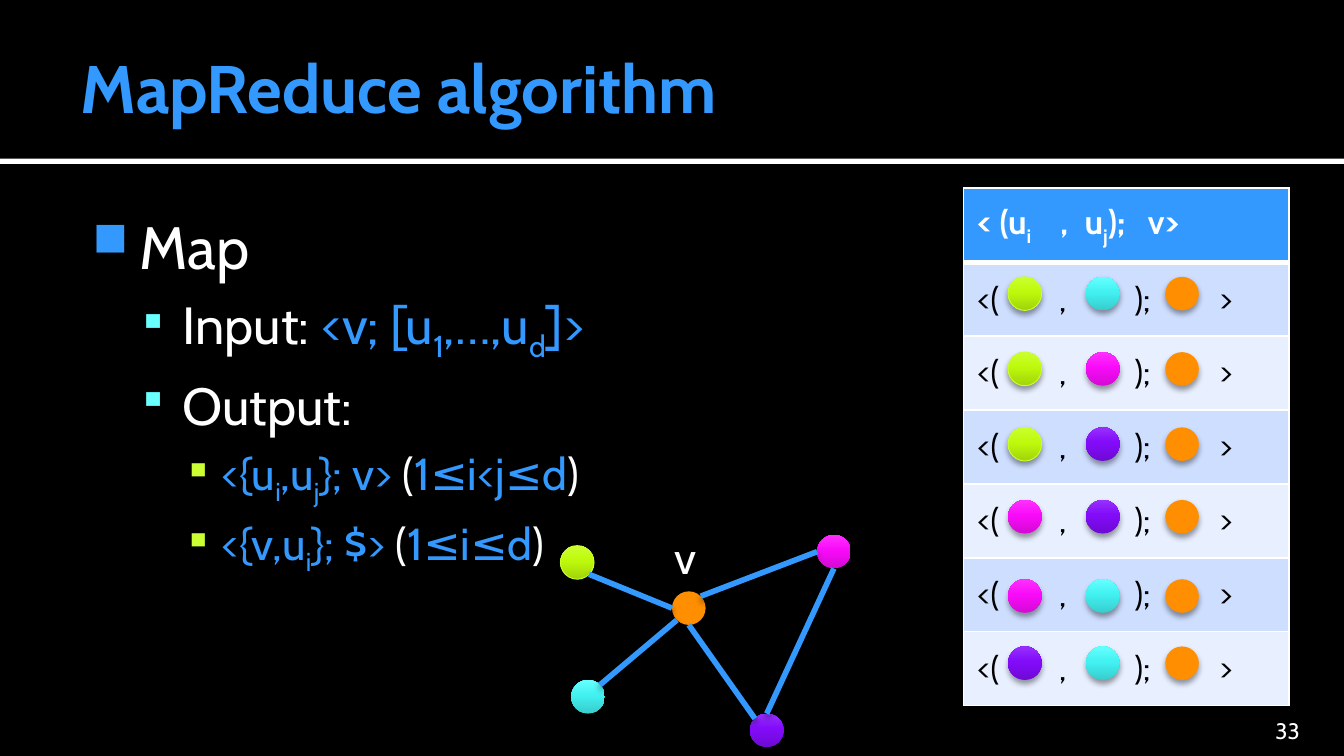
from math import cos, radians, sin

from lxml import etree
from pptx import Presentation
from pptx.dml.color import RGBColor
from pptx.enum.shapes import MSO_CONNECTOR as Line, MSO_SHAPE as Shape
from pptx.enum.text import MSO_ANCHOR as Anchor, PP_ALIGN as Align
from pptx.oxml import parse_xml
from pptx.oxml.ns import nsdecls, qn
from pptx.util import Inches, Pt

# Content
FONT, BLUE, WHITE, BLACK = "Cabin", "3399FF", "FFFFFF", "000000"
TITLE = "MapReduce algorithm"
PAGE_NUMBER = "33"

# Level, then runs of (text, colour); a leading "_" marks a subscript
BODY = [
    (0, [("Map", WHITE)]),
    (1, [("Input: ", WHITE), ("<v; [u", BLUE), ("_1", BLUE), (",…,u", BLUE),
         ("_d", BLUE), ("]>", BLUE)]),
    (1, [("Output:", WHITE)]),
    (2, [("<{u", BLUE), ("_i", BLUE), (",u", BLUE), ("_j", BLUE), ("}; v>", BLUE),
         (" (", WHITE), ("1≤i<j≤d", BLUE), (")", WHITE)]),
    (2, [("<{v,u", BLUE), ("_i", BLUE), ("}; $>", BLUE), (" (", WHITE),
         ("1≤i≤d", BLUE), (")", WHITE)]),
]
# Size, space before, left margin, hanging indent, Wingdings bullet, its colour, its percent
LEVELS = [
    (32, 0, 0.48, 0.35, "n", BLUE, 80),
    (28, 5.6, 0.8, 0.3, "§", "69FFFF", 90),
    (24, 4.8, 1.09, 0.25, "§", "CCFF33", 100),
]

# Node colours: one is solid, the others run from bottom to top
COLOURS = {
    "orange": ["FF8E00"],
    "purple": ["6F0AD4", "820BF9", "9830FF"],
    "pink": ["D40AD4", "F90BF9", "FF30FF"],
    "cyan": ["38CDCD", "42F1F1", "66FFFF"],
    "green": ["A1D40A", "BEF90B", "CBFF30"],
}
NODES = {"orange": (5, 4.4), "purple": (5.58, 5.31), "pink": (6.08, 3.98),
         "cyan": (4.25, 5.06), "green": (4.17, 4.06)}
# Node and angle (clockwise from the right) at both ends
EDGES = [("orange", -45, "pink", 180), ("orange", 90, "purple", 225),
         ("pink", 90, "purple", -90), ("cyan", -45, "orange", 135),
         ("green", 45, "orange", 180)]
DOT = 0.25

HEADER = [("< (u", WHITE), ("_i", WHITE), ("\t,\tu", WHITE), ("_j", WHITE),
          (");\tv>", WHITE)]
HEADER_TABS = [0.62, 0.8, 1.27]
PAIR = [("<(\t,\t);\t>", BLACK)]
PAIR_TABS = [0.61, 1.17, 1.8]
# Top of the dots and the two neighbours of each pair
PAIRS = [(2.06, "green", "cyan"), (2.62, "green", "pink"), (3.18, "green", "purple"),
         (3.72, "pink", "purple"), (4.31, "pink", "cyan"), (4.81, "purple", "cyan")]
DOT_LEFTS = [7.5, 8.08, 8.67]
ROW_HEIGHT = 0.55


def rgb(code):
    return RGBColor.from_string(code)


def add_runs(para, runs, size, bold=False):
    for text, colour in runs:
        span = para.add_run()
        span.text = text.lstrip("_")
        span.font.name, span.font.size, span.font.bold = FONT, Pt(size), bold
        span.font.color.rgb = rgb(colour)
        if text.startswith("_"):
            span.font._element.set("baseline", "-25000")


def set_frame(frame, insets, anchor=Anchor.TOP):
    frame.word_wrap = True
    frame.vertical_anchor = anchor
    (frame.margin_left, frame.margin_top,
     frame.margin_right, frame.margin_bottom) = map(Inches, insets)


def add_text(at, insets, anchor=Anchor.TOP):
    box = page.shapes.add_textbox(*map(Inches, at))
    set_frame(box.text_frame, insets, anchor)
    return box.text_frame


def add_shadow(shape, blur, distance, alpha):
    props = shape._element.spPr
    effects = props.find(qn("a:effectLst"))
    if effects is None:
        effects = etree.SubElement(props, qn("a:effectLst"))
    effects.append(parse_xml(
        f'<a:outerShdw {nsdecls("a")} blurRad="{Pt(blur)}" dist="{Pt(distance)}" '
        f'dir="5400000" rotWithShape="0"><a:srgbClr val="{BLACK}">'
        f'<a:alpha val="{alpha * 1000}"/></a:srgbClr></a:outerShdw>'))


def add_dot(shapes, name, left, top):
    dot = shapes.add_shape(Shape.OVAL, *map(Inches, (left, top, DOT, DOT)))
    dot.shadow.inherit = False
    colours = COLOURS[name]
    if len(colours) == 1:
        dot.fill.solid()
        dot.fill.fore_color.rgb = rgb(colours[0])
    else:
        dot.fill.gradient()
        dot.fill.gradient_angle = 90
        stops = dot._element.spPr.find(".//" + qn("a:gsLst"))
        stops.clear()
        for position, colour in zip((0, 55, 100), colours):
            stops.append(parse_xml(
                f'<a:gs {nsdecls("a")} pos="{position * 1000}">'
                f'<a:srgbClr val="{colour}"/></a:gs>'))
    if name == "green":
        dot.line.color.rgb = rgb("CAFE2D")
        dot.line.width = Pt(0.5)
    else:
        dot.line.fill.background()
    add_shadow(dot, 3.1, 2, 38)


def rim_point(name, angle):
    left, top = NODES[name]
    radius = DOT / 2
    return (Inches(left + radius + radius * cos(radians(angle))),
            Inches(top + radius + radius * sin(radians(angle))))


def set_cell(cell, runs, tabs, fill, bold, bottom):
    cell.vertical_anchor = Anchor.MIDDLE
    para = cell.text_frame.paragraphs[0]
    add_runs(para, runs, 18, bold)
    tab_list = etree.SubElement(para._p.get_or_add_pPr(), qn("a:tabLst"))
    for tab in tabs:
        etree.SubElement(tab_list, qn("a:tab"), pos=str(Inches(tab)), algn="l")
    props = cell._tc.get_or_add_tcPr()
    for side, width in (("L", 1), ("R", 1), ("T", 1), ("B", bottom)):
        props.append(parse_xml(
            f'<a:ln{side} {nsdecls("a")} w="{Pt(width)}"><a:solidFill>'
            f'<a:srgbClr val="{WHITE}"/></a:solidFill></a:ln{side}>'))
    cell.fill.solid()
    cell.fill.fore_color.rgb = rgb(fill)


# Widescreen page, 16 to 9
deck = Presentation()
deck.slide_width, deck.slide_height = Inches(10), Inches(10 * 9 / 16)
page = deck.slides.add_slide(deck.slide_layouts[5])
page.background.fill.solid()
page.background.fill.fore_color.rgb = rgb(BLACK)

# Title and the rule under it
title = page.shapes.title
title.left, title.top, title.width, title.height = map(Inches, (0.5, 0.13, 9, 1.03))
set_frame(title.text_frame, (0.1, 0.05, 0.05, 0.05), Anchor.MIDDLE)
title.text_frame.paragraphs[0].alignment = Align.LEFT
add_runs(title.text_frame.paragraphs[0], [(TITLE, BLUE)], 36, True)

rule = page.shapes.add_shape(Shape.RECTANGLE, *map(Inches, (0, 1.18, 10, 0.04)))
rule.shadow.inherit = False
rule.fill.solid()
rule.fill.fore_color.rgb = rgb(WHITE)
rule.line.fill.background()
add_shadow(rule, 2.5, 0.8, 60)

# Bulleted text
body = add_text((0.5, 1.46, 9, 3.79), (0.06, 0.1, 0.1, 0.05))
for index, (level, runs) in enumerate(BODY):
    para = body.add_paragraph() if index else body.paragraphs[0]
    size, before, margin, hang, bullet, colour, percent = LEVELS[level]
    para.level = level
    para.space_before = Pt(before)
    props = para._p.get_or_add_pPr()
    props.set("marL", str(Inches(margin)))
    props.set("indent", str(-Inches(hang)))
    bullet_colour = etree.SubElement(props, qn("a:buClr"))
    etree.SubElement(bullet_colour, qn("a:srgbClr"), val=colour)
    etree.SubElement(props, qn("a:buSzPct"), val=str(percent * 1000))
    etree.SubElement(props, qn("a:buFont"), typeface="Wingdings", charset="2")
    etree.SubElement(props, qn("a:buChar"), char=bullet)
    add_runs(para, runs, size)

# Page number
number = add_text((8.97, 5.31, 0.8, 0.23), (0.1, 0.05, 0.1, 0), Anchor.BOTTOM)
number.paragraphs[0].alignment = Align.RIGHT
add_runs(number.paragraphs[0], [(PAGE_NUMBER, WHITE)], 12)

# Graph
graph = page.shapes.add_group_shape()
for name, (left, top) in NODES.items():
    add_dot(graph.shapes, name, left, top)
for start, start_angle, end, end_angle in EDGES:
    edge = graph.shapes.add_connector(
        Line.STRAIGHT, *rim_point(start, start_angle), *rim_point(end, end_angle))
    edge.line.color.rgb = rgb(BLUE)
    edge.line.width = Pt(3)
    add_shadow(edge, 3.5, 2, 38)
label = add_text((4.92, 3.89, 0.58, 0.5), (0.1, 0.05, 0.1, 0.05))
add_runs(label.paragraphs[0], [("v", WHITE)], 24)

# Table of pairs, with dots on its rows
row_count = len(PAIRS) + 1
table = page.shapes.add_table(
    row_count, 1, *map(Inches, (7.17, 1.4, 2.42, ROW_HEIGHT * row_count))).table
set_cell(table.cell(0, 0), HEADER, HEADER_TABS, BLUE, True, 3)
for row, (top, first, second) in enumerate(PAIRS, 1):
    fill = "CEDEFF" if row % 2 else "E8EFFF"
    set_cell(table.cell(row, 0), PAIR, PAIR_TABS, fill, False, 1)
    for left, name in zip(DOT_LEFTS, (first, second, "orange")):
        add_dot(page.shapes, name, left, top)

deck.save("out.pptx")
